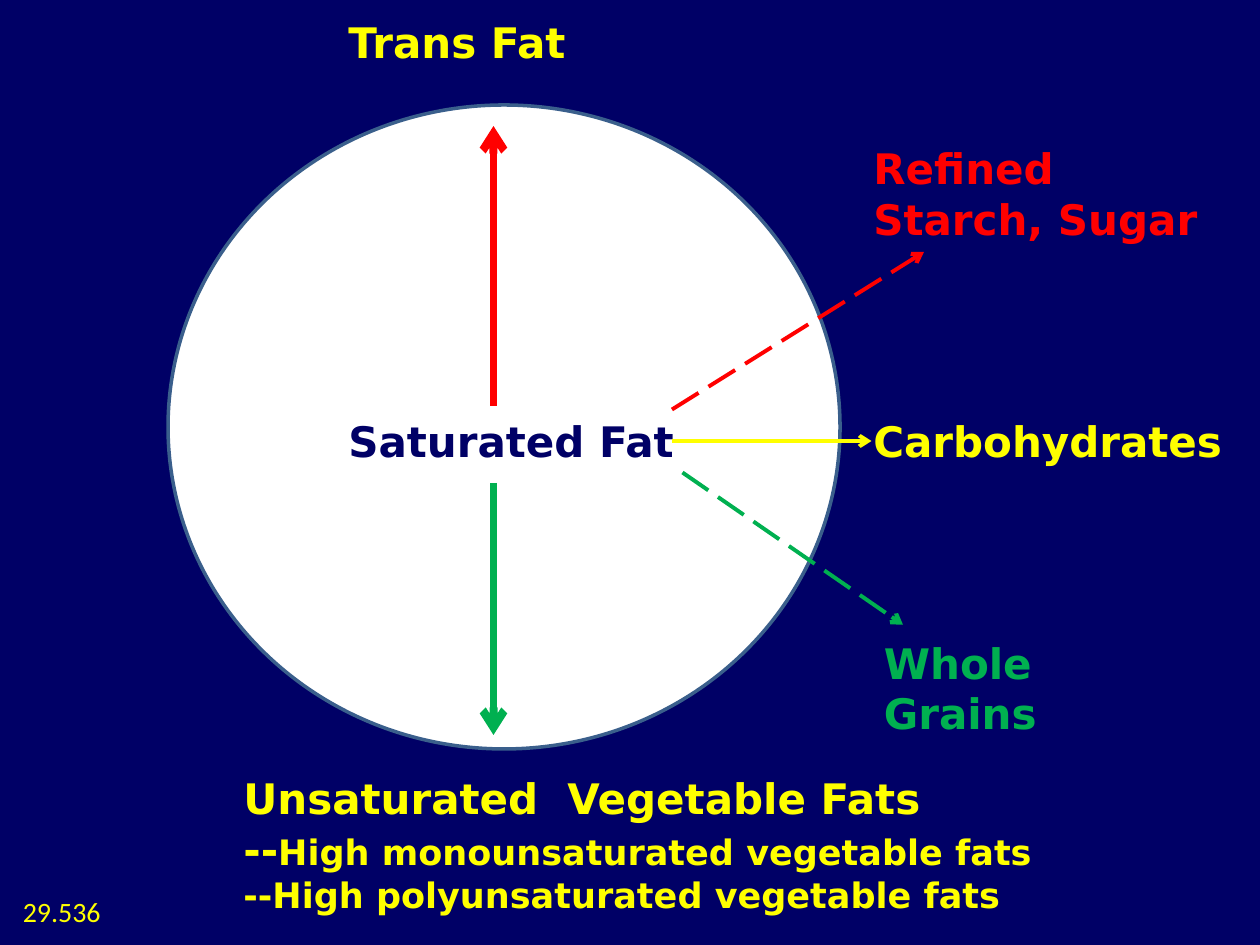
from collections import namedtuple
from dataclasses import dataclass

from lxml.etree import SubElement
from pptx import Presentation
from pptx.dml.color import RGBColor
from pptx.enum.dml import MSO_LINE
from pptx.enum.shapes import MSO_CONNECTOR, MSO_SHAPE
from pptx.oxml.ns import qn
from pptx.util import Pt

Box = namedtuple("Box", "left top width height")


@dataclass(frozen=True)
class Theme:
    """Colours, fonts and type sizes of the slide."""
    navy: str = "000066"
    white: str = "FFFFFF"
    rim: str = "3A5F8C"
    red: str = "FF0000"
    green: str = "00B050"
    yellow: str = "FFFF00"
    label_font: str = "DejaVu Sans"
    number_font: str = "Calibri"
    label_size: float = 24
    detail_size: float = 20
    number_size: float = 16
    rim_width: float = 2
    thick: float = 4.5
    thin: float = 2.25


THEME = Theme()


def color(value):
    """Return the RGB colour for a hex value."""
    return RGBColor.from_string(value)


def style(paragraph, hue, size=THEME.label_size, font=THEME.label_font, bold=True):
    """Set the font of a whole paragraph."""
    paragraph.font.name = font
    paragraph.font.size = Pt(size)
    paragraph.font.bold = bold
    paragraph.font.color.rgb = color(hue)


def add_text(slide, box, text, hue, **font):
    """Add a wrapping text box with one styled paragraph."""
    text_frame = slide.shapes.add_textbox(*map(Pt, box)).text_frame
    text_frame.word_wrap = True
    paragraph = text_frame.paragraphs[0]
    paragraph.text = text
    style(paragraph, hue, **font)
    return text_frame


def add_arrow(slide, start, end, hue, width, dashed=False):
    """Add a straight line with an arrowhead at its end."""
    arrow = slide.shapes.add_connector(MSO_CONNECTOR.STRAIGHT, *map(Pt, (*start, *end)))
    arrow.line.color.rgb = color(hue)
    arrow.line.width = Pt(width)
    if dashed:
        arrow.line.dash_style = MSO_LINE.LONG_DASH
    properties = arrow.element.spPr
    SubElement(properties.find(qn("a:ln")), qn("a:tailEnd"), type="arrow")
    SubElement(properties, qn("a:effectLst"))


def add_fat_circle(slide, box):
    """Draw the circle with saturated fat and its vertical arrows."""
    circle = slide.shapes.add_shape(MSO_SHAPE.OVAL, *map(Pt, box))
    circle.shadow.inherit = False
    circle.fill.solid()
    circle.fill.fore_color.rgb = color(THEME.white)
    circle.line.color.rgb = color(THEME.rim)
    circle.line.width = Pt(THEME.rim_width)
    left, top = box.left + 96, box.top + 174
    add_text(slide, Box(left, top, 228, 36), "Saturated Fat", THEME.navy)
    axis = left + 90
    for start, end, hue in (
        (top - 2, box.top + 12, THEME.red),
        (top + 42, box.top + box.height - 8, THEME.green),
    ):
        add_arrow(slide, (axis, start), (axis, end), hue, THEME.thick)


def add_carbohydrates(slide, box):
    """Draw the arrows to carbohydrates and its two kinds, with their labels."""
    left, top = box.left, box.top
    branches = (
        ("Refined Starch, Sugar", THEME.red, (108, 0, 222, 66), (0, 156), (144, 66), True),
        ("Carbohydrates", THEME.yellow, (108, 156, 222, 36), (0, 174), (114, 174), False),
        ("Whole Grains", THEME.green, (114, 282.5, 144, 66), (6, 192), (132, 279), True),
    )
    for text, hue, (x, y, width, height), start, end, dashed in branches:
        add_text(slide, Box(left + x, top + y, width, height), text, hue)
        ends = [(left + across, top + down) for across, down in (start, end)]
        add_arrow(slide, *ends, hue, THEME.thin, dashed)


def add_vegetable_fats(slide, box):
    """Write the unsaturated fats heading and its two details."""
    text_frame = add_text(slide, box, "Unsaturated  Vegetable Fats", THEME.yellow)
    mono = text_frame.add_paragraph()
    style(mono, THEME.yellow, THEME.detail_size)
    dashes = mono.add_run()
    dashes.text = "--"
    dashes.font.size = Pt(THEME.label_size)
    mono.add_run().text = "High monounsaturated vegetable fats"
    poly = text_frame.add_paragraph()
    poly.text = "--High polyunsaturated vegetable fats"
    style(poly, THEME.yellow, THEME.detail_size)


def main():
    """Build and save the slide."""
    presentation = Presentation()
    presentation.slide_width, presentation.slide_height = Pt(720), Pt(540)
    slide = presentation.slides.add_slide(presentation.slide_layouts[6])
    slide.background.fill.solid()
    slide.background.fill.fore_color.rgb = color(THEME.navy)
    add_fat_circle(slide, Box(96, 60, 384, 368))
    add_text(slide, Box(192, 6, 246, 36), "Trans Fat", THEME.yellow)
    add_carbohydrates(slide, Box(384, 78, 330, 348))
    add_vegetable_fats(slide, Box(132, 438, 468, 90))
    add_text(slide, Box(6, 507.5, 114, 26.5), "29.536", THEME.yellow,
             size=THEME.number_size, font=THEME.number_font, bold=False)
    presentation.save("out.pptx")


if __name__ == "__main__":
    main()
